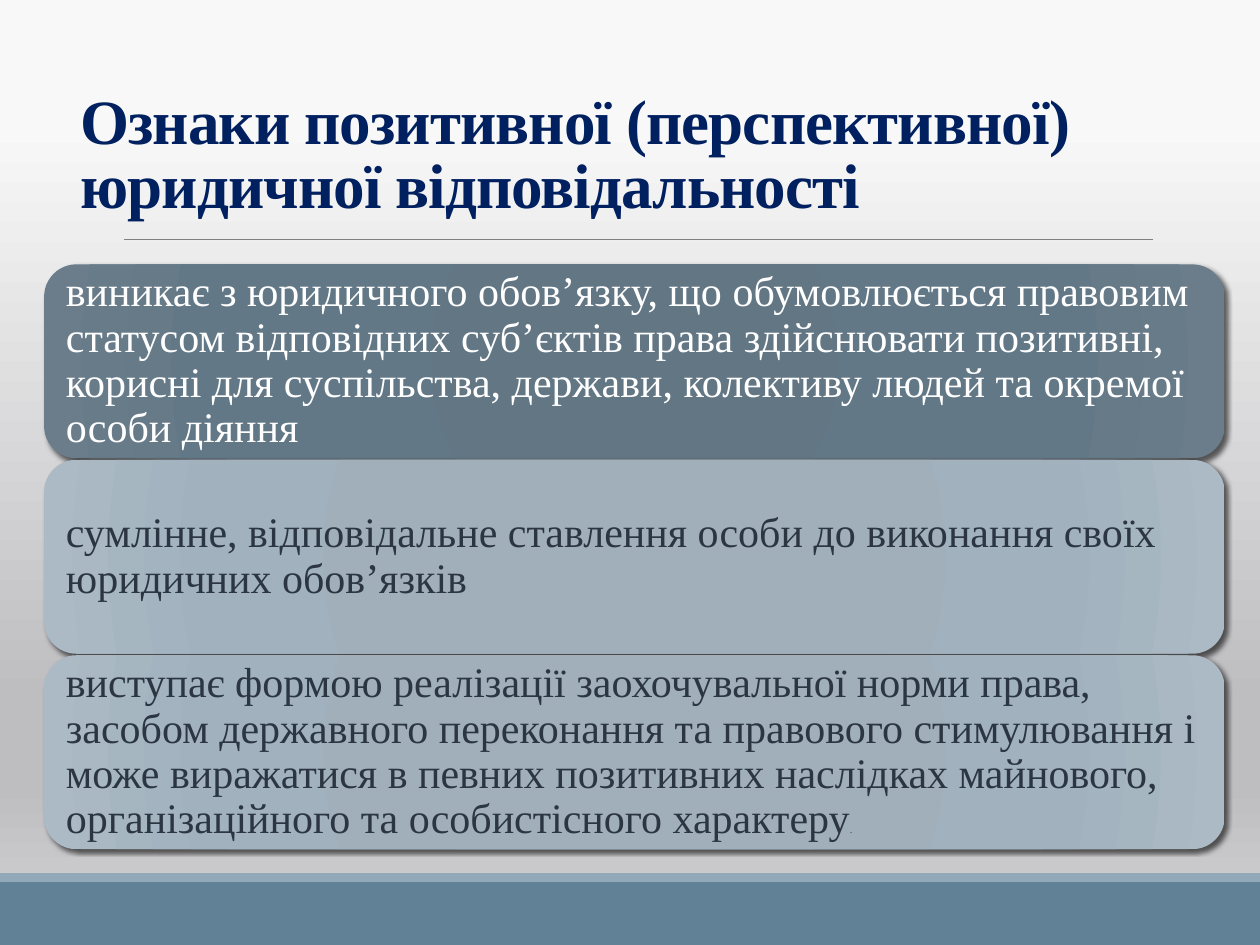
from lxml.etree import SubElement
from pptx import Presentation
from pptx.dml.color import RGBColor
from pptx.enum.shapes import MSO_CONNECTOR, MSO_SHAPE
from pptx.enum.text import MSO_ANCHOR
from pptx.oxml.ns import qn
from pptx.util import Cm, Pt

HUES = {"band": "618197", "strip": "92A9B9", "rule": "808080",
        "title": "002060", "light": "FFFFFF", "dark": "2B3642", "shade": "000000"}
BACK = [(13, "F8F8F8"), (74, "BEBEC1"), (83, "BEBEC1"), (100, "D4D4D5")]
DEEP = [(0, "617584"), (34, "627684"), (70, "637887"), (100, "6B7D8A")]
PALE = [(0, "9EADB9"), (34, "A0AFBA"), (70, "A1B2BE"), (100, "ABBAC4")]
SERIF = "Times New Roman"
CARDS = [
    (DEEP, "light", [("виникає з юридичного обов’язку, що обумовлюється правовим статусом "
                      "відповідних суб’єктів права здійснювати позитивні, корисні для "
                      "суспільства, держави, колективу людей та окремої особи діяння",
                      SERIF, 24)]),
    (PALE, "dark", [("сумлінне, відповідальне ставлення особи до виконання своїх "
                     "юридичних обов’язків", SERIF, 24)]),
    (PALE, "dark", [("виступає формою реалізації заохочувальної норми права, засобом "
                     "державного переконання та правового стимулювання і може виражатися "
                     "в певних позитивних наслідках майнового, організаційного та "
                     "особистісного характеру", SERIF, 24), (".", "Calibri", 5)]),
]


def hue(name):
    """Return the named colour."""
    return RGBColor.from_string(HUES[name])


def add(node, tag, **attrs):
    """Append a drawing element with the given attributes."""
    return SubElement(node, qn(tag), {key: str(val) for key, val in attrs.items()})


def blend(fill, root, stops, round_=False):
    """Give a fill its gradient stops, round or from top to bottom."""
    fill.gradient()
    grad = next(root.iter(qn("a:gradFill")))
    for child in list(grad):
        grad.remove(child)
    group = add(grad, "a:gsLst")
    for place, code in stops:
        add(add(group, "a:gs", pos=place * 1000), "a:srgbClr", val=code)
    if round_:
        way = add(grad, "a:path", path="circle")
        add(way, "a:fillToRect", l=100000, t=100000, r=100000, b=100000)
    else:
        add(grad, "a:lin", ang=5400000, scaled=0)


def write(slide, box, runs, color, anchor, lines=0.9, bold=False, track=None):
    """Place a text box holding one paragraph of runs."""
    frame = slide.shapes.add_textbox(*map(Cm, box)).text_frame
    frame.word_wrap = True
    frame.vertical_anchor = anchor
    frame.margin_left = frame.margin_right = Cm(0.25)
    frame.margin_top = frame.margin_bottom = Cm(0.25)
    para = frame.paragraphs[0]
    para.line_spacing = lines
    for text, face, size in runs:
        run = para.add_run()
        run.text = text
        font = run.font
        font.name, font.size, font.bold = face, Pt(size), bold
        font.color.rgb = hue(color)
        if track:
            run._r.get_or_add_rPr().set("spc", str(track))


def block(slide, kind, box):
    """Add a shape with neither line nor shadow."""
    shape = slide.shapes.add_shape(kind, *map(Cm, box))
    shape.shadow.inherit = False
    shape.line.fill.background()
    return shape


def base(slide, box):
    """Draw the foot band with a thin strip along its top."""
    left, top, width, height = box
    strip = 0.18
    for name, y, tall in (("band", top + strip, height - strip), ("strip", top, strip)):
        shape = block(slide, MSO_SHAPE.RECTANGLE, (left, y, width, tall))
        shape.fill.solid()
        shape.fill.fore_color.rgb = hue(name)


def head(slide, box):
    """Write the title and draw the rule below it."""
    left, top, width, height = box
    y = Cm(top + height + 0.1)
    rule = slide.shapes.add_connector(
        MSO_CONNECTOR.STRAIGHT, Cm(left + 1.12), y, Cm(left + width - 0.99), y)
    rule.line.color.rgb = hue("rule")
    rule.line.width = Pt(0.5)
    add(rule._element.spPr, "a:effectLst")
    title = "Ознаки позитивної (перспективної) юридичної відповідальності"
    write(slide, box, [(title, SERIF, 36)], "title", MSO_ANCHOR.BOTTOM,
          lines=0.85, bold=True, track=-50)


def card(slide, box, stops, color, runs):
    """Draw a rounded card with a cast shadow and its text."""
    left, top, width, height = box
    shape = block(slide, MSO_SHAPE.ROUNDED_RECTANGLE, box)
    blend(shape.fill, shape._element, stops, True)
    cast = add(shape._element.spPr.find(qn("a:effectLst")), "a:outerShdw",
               blurRad=Pt(3), dist=Pt(2), dir=2700000, algn="tl", rotWithShape=0)
    add(add(cast, "a:srgbClr", val=HUES["shade"]), "a:alpha", val=60000)
    pad = 0.19
    inner = (left + pad, top + pad, width - 2 * pad, height - 2 * pad)
    write(slide, inner, runs, color, MSO_ANCHOR.MIDDLE)


def stack(slide, box):
    """Stack the cards evenly in the box."""
    left, top, width, height = box
    gap = 0.03
    tall = (height - gap * (len(CARDS) - 1)) / len(CARDS)
    for row, (stops, color, runs) in enumerate(CARDS):
        card(slide, (left, top + row * (tall + gap), width, tall), stops, color, runs)


def main():
    """Build the slide and save it."""
    deck = Presentation()
    deck.slide_width, deck.slide_height = Cm(25.4), Cm(19.05)
    slide = deck.slides.add_slide(deck.slide_layouts[6])
    blend(slide.background.fill, slide._element, BACK)
    base(slide, (0, 17.6, 25.4, 1.45))
    head(slide, (1.37, 0.53, 22.86, 4.19))
    stack(slide, (0.89, 5.33, 23.8, 11.79))
    deck.save("out.pptx")


if __name__ == "__main__":
    main()
